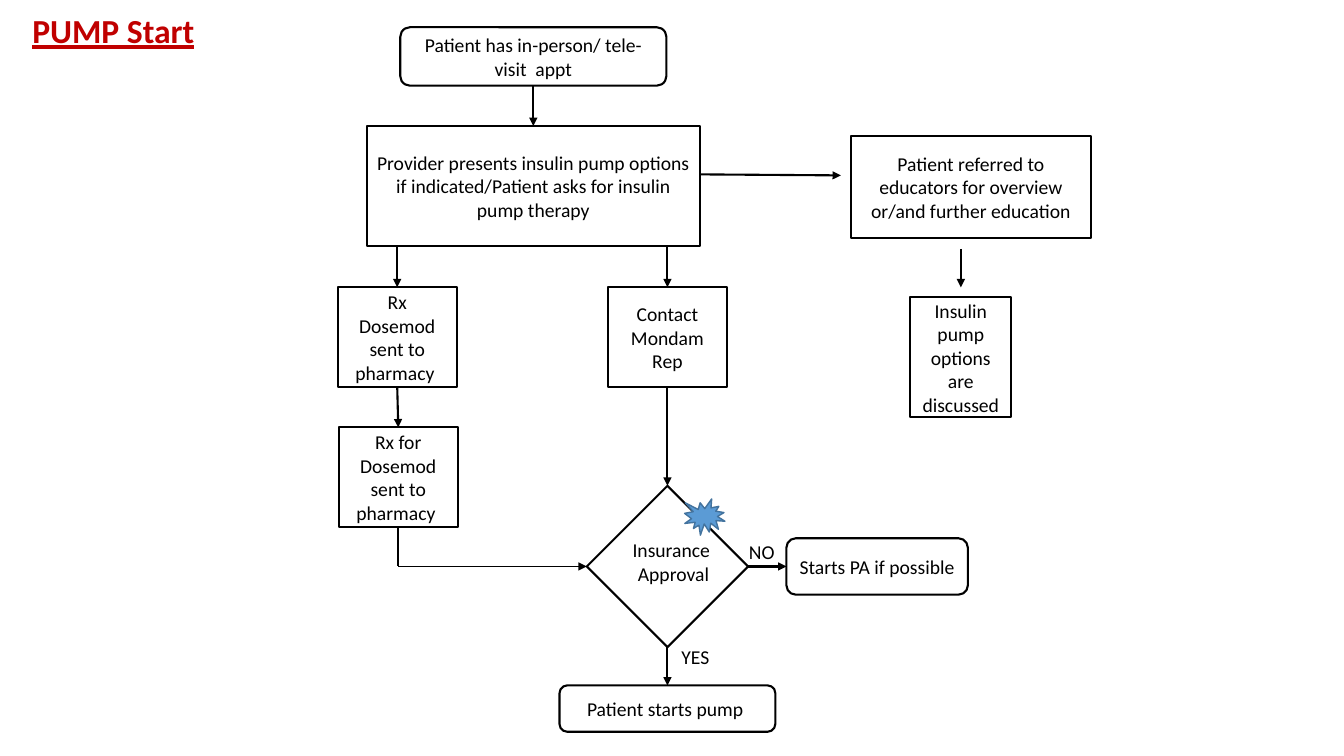
from dataclasses import dataclass

from lxml.etree import SubElement
from pptx import Presentation
from pptx.dml.color import RGBColor
from pptx.enum.shapes import MSO_CONNECTOR, MSO_SHAPE
from pptx.enum.text import MSO_ANCHOR, MSO_AUTO_SIZE, PP_ALIGN
from pptx.oxml.ns import qn
from pptx.util import Inches, Pt

FONT = "Calibri"
BLACK = "000000"
WHITE = "FFFFFF"
TOP, LEFT, BOTTOM, RIGHT = range(4)
RECT = MSO_SHAPE.RECTANGLE
ROUND = MSO_SHAPE.ROUNDED_RECTANGLE


@dataclass
class Box:
    name: str
    kind: MSO_SHAPE
    at: tuple[float, float, float, float]
    text: str = ""
    fill: str = WHITE
    line: str = BLACK
    width: float = 1.5


@dataclass
class Label:
    at: tuple[float, float, float, float]
    text: str
    align: PP_ALIGN = PP_ALIGN.LEFT


@dataclass
class Arrow:
    start: tuple[float, float]
    end: tuple[float, float]
    tail: tuple[str, int] | None = None
    head: tuple[str, int] | None = None
    width: float = 1.5
    tip: bool = True


BOXES = [
    Box("visit", ROUND, (3.97, 0.27, 2.64, 0.58),
        "Patient has in-person/ tele-visit  appt"),
    Box("offer", RECT, (3.64, 1.25, 3.3, 1.19),
        "Provider presents insulin pump options if indicated/Patient asks "
        "for insulin pump therapy"),
    Box("script", RECT, (3.35, 2.85, 1.18, 0.99),
        "Rx Dosemod\nsent to pharmacy "),
    Box("refill", RECT, (3.36, 4.24, 1.18, 0.99),
        "Rx for Dosemod\nsent to pharmacy "),
    Box("rep", RECT, (6.03, 2.85, 1.18, 0.99), "Contact Mondam Rep"),
    Box("refer", RECT, (8.44, 1.35, 2.38, 1.01),
        "Patient referred to educators for overview or/and further education"),
    Box("options", RECT, (9.03, 2.95, 1, 1.19),
        "Insulin pump options are discussed"),
    Box("start", ROUND, (5.55, 6.8, 2.14, 0.46), "Patient starts pump "),
    Box("check", MSO_SHAPE.DIAMOND, (5.82, 4.82, 1.6, 1.6), fill=""),
    Box("appeal", ROUND, (7.8, 5.34, 1.8, 0.56), "Starts PA if possible", fill=""),
]
BURST = Box("burst", MSO_SHAPE.EXPLOSION1, (6.79, 4.95, 0.4, 0.36),
            fill="5B9BD5", line="43739E", width=1)

LABELS = [
    Label((5.92, 5.29, 1.52, 0.57), "Insurance \nApproval", PP_ALIGN.CENTER),
    Label((7.33, 5.31, 0.63, 0.34), "NO"),
    Label((6.66, 6.35, 0.54, 0.34), "YES"),
]

ARROWS = [
    Arrow((5.29, 0.85), (5.29, 1.25), ("visit", BOTTOM), ("offer", TOP)),
    Arrow((3.94, 2.44), (3.94, 2.85), head=("script", TOP)),
    Arrow((6.62, 2.44), (6.62, 2.85), head=("rep", TOP)),
    Arrow((6.94, 1.73), (8.34, 1.74)),
    Arrow((9.53, 2.47), (9.53, 2.85)),
    Arrow((3.94, 3.84), (3.95, 4.24), ("script", BOTTOM), ("refill", TOP)),
    Arrow((3.95, 5.23), (3.95, 5.62), ("refill", BOTTOM), tip=False),
    Arrow((3.95, 5.62), (5.82, 5.62), head=("check", LEFT), width=0.5),
    Arrow((6.62, 3.84), (6.62, 4.82), ("rep", BOTTOM), ("check", TOP)),
    Arrow((6.62, 6.42), (6.62, 6.8), ("check", BOTTOM), ("start", TOP)),
    Arrow((7.42, 5.62), (7.8, 5.62), ("check", RIGHT), ("appeal", LEFT)),
]


def paint(target, color: str) -> None:
    target.rgb = RGBColor.from_string(color)


def place(at: tuple) -> list:
    return [Inches(n) for n in at]


def write(frame, text: str, align: PP_ALIGN, size: float = 14,
          color: str = BLACK, strong: bool = False) -> None:
    frame.text = text
    frame.word_wrap = True
    for para in frame.paragraphs:
        para.alignment = align
        for run in para.runs:
            font = run.font
            font.name, font.size = FONT, Pt(size)
            font.bold = font.underline = strong
            paint(font.color, color)


def draw_box(slide, box: Box):
    shape = slide.shapes.add_shape(box.kind, *place(box.at))
    shape.shadow.inherit = False
    if box.fill:
        shape.fill.solid()
        paint(shape.fill.fore_color, box.fill)
    else:
        shape.fill.background()
    paint(shape.line.color, box.line)
    shape.line.width = Pt(box.width)
    if box.text:
        frame = shape.text_frame
        write(frame, box.text, PP_ALIGN.CENTER)
        frame.vertical_anchor = MSO_ANCHOR.MIDDLE
    return shape


def draw_label(slide, label: Label) -> None:
    frame = slide.shapes.add_textbox(*place(label.at)).text_frame
    write(frame, label.text, label.align)
    frame.auto_size = MSO_AUTO_SIZE.SHAPE_TO_FIT_TEXT


def draw_arrow(slide, arrow: Arrow, nodes: dict) -> None:
    ends = place(arrow.start + arrow.end)
    link = slide.shapes.add_connector(MSO_CONNECTOR.STRAIGHT, *ends)
    if arrow.tail:
        name, side = arrow.tail
        link.begin_connect(nodes[name], side)
    if arrow.head:
        name, side = arrow.head
        link.end_connect(nodes[name], side)
    paint(link.line.color, BLACK)
    link.line.width = Pt(arrow.width)
    props = link._element.spPr
    if arrow.tip:
        SubElement(props.find(qn("a:ln")), qn("a:tailEnd"), type="triangle")
    SubElement(props, qn("a:effectLst"))


def draw_title(slide) -> None:
    title = slide.shapes.title
    title.left, title.top, title.width, title.height = place((0.22, 0.05, 6.42, 0.5))
    frame = title.text_frame
    write(frame, "PUMP Start", PP_ALIGN.LEFT, 24, "C00000", True)
    frame.vertical_anchor = MSO_ANCHOR.TOP
    frame.auto_size = MSO_AUTO_SIZE.SHAPE_TO_FIT_TEXT


def main() -> None:
    deck = Presentation()
    deck.slide_width, deck.slide_height = Inches(13.33), Inches(7.5)
    slide = deck.slides.add_slide(deck.slide_layouts[5])
    draw_title(slide)
    nodes = {box.name: draw_box(slide, box) for box in BOXES}
    for arrow in ARROWS:
        draw_arrow(slide, arrow, nodes)
    for label in LABELS:
        draw_label(slide, label)
    draw_box(slide, BURST)
    deck.save("out.pptx")


if __name__ == "__main__":
    main()
